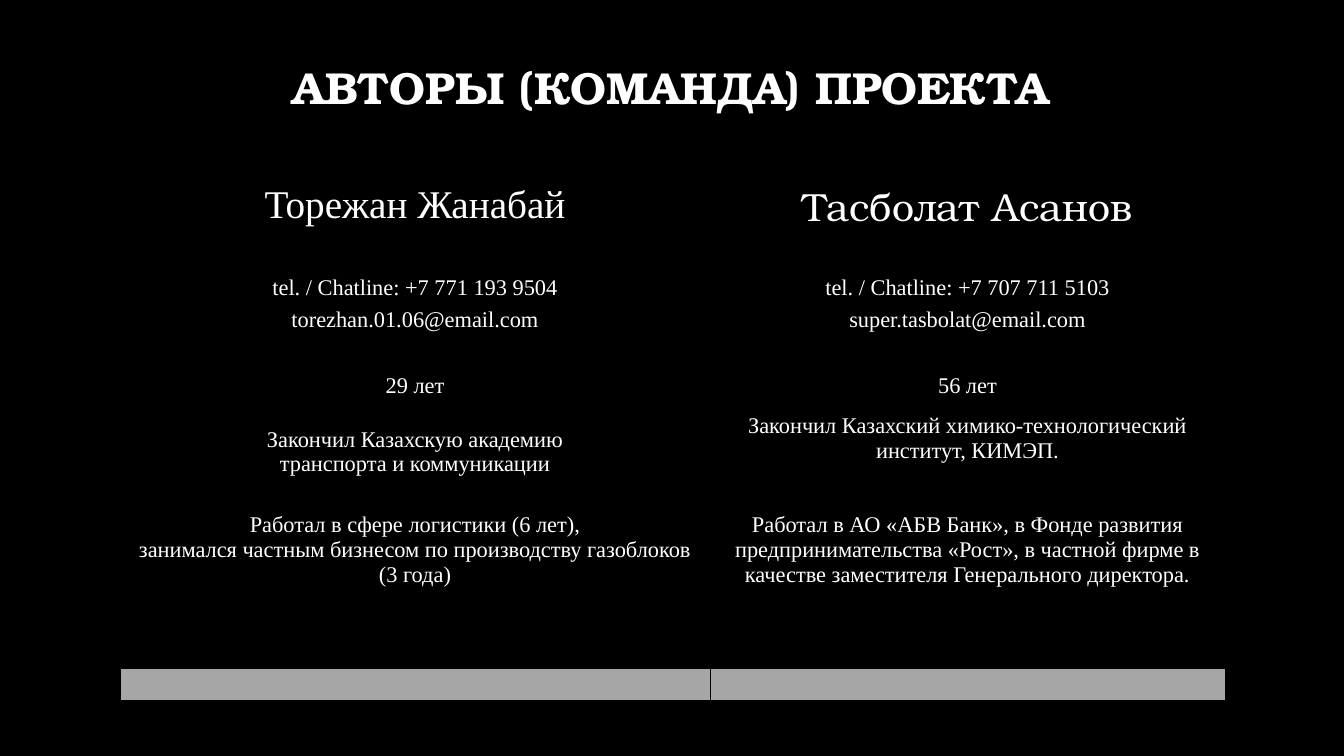
import dataclasses

import lxml.etree
import pptx
import pptx.dml.color
import pptx.enum.text
import pptx.oxml.ns
import pptx.util

EMU_PER_PX = 914400 / 100.8
WHITE, BLACK, GREY = "FFFFFF", "000000", "A6A6A6"
SERIF, DISPLAY = "Times New Roman", "TeX Gyre Bonum"
COLUMN_WIDTHS = (590, 515)
ROW_HEIGHTS = (57, 37, 33, 33, 33, 33, 98, 98, 33, 37, 32)


@dataclasses.dataclass(frozen=True)
class Entry:
    """Text of one table cell and its look."""

    row: int
    text: str
    size: int = 16
    font: str = SERIF
    bottom: int = 0


AUTHORS = (
    (
        Entry(0, "Торежан Жанабай", 28),
        Entry(2, "tel. / Chatline: +7 771 193 9504"),
        Entry(3, "torezhan.01.06@email.com"),
        Entry(5, "29 лет"),
        Entry(6, "Закончил Казахскую академию\nтранспорта и коммуникации"),
        Entry(7, "Работал в сфере логистики (6 лет),\n"
                 "занимался частным бизнесом по производству газоблоков\n(3 года)"),
    ),
    (
        Entry(0, "Тасболат Асанов", 28, DISPLAY),
        Entry(2, "tel. / Chatline: +7 707 711 5103"),
        Entry(3, "super.tasbolat@email.com"),
        Entry(5, "56 лет"),
        Entry(6, "Закончил Казахский химико-технологический институт, КИМЭП.", bottom=26),
        Entry(7, "Работал в АО «АБВ Банк», в Фонде развития предпринимательства «Рост», "
                 "в частной фирме в качестве заместителя Генерального директора."),
    ),
)


def px(length: int) -> pptx.util.Emu:
    """Turn px into EMU."""
    return pptx.util.Emu(round(length * EMU_PER_PX))


def rgb(value: str) -> pptx.dml.color.RGBColor:
    """Turn a hex string into a colour."""
    return pptx.dml.color.RGBColor.from_string(value)


def format_text(frame, size: int, font: str, bold: bool = False) -> None:
    """Centre the paragraphs of a frame and style their runs."""
    for para in frame.paragraphs:
        para.alignment = pptx.enum.text.PP_ALIGN.CENTER
        for span in para.runs:
            span.font.size = pptx.util.Pt(size)
            span.font.name = font
            span.font.bold = bold
            span.font.color.rgb = rgb(WHITE)


def add_borders(cell, outer_sides: set[str]) -> None:
    """Draw black cell borders, thicker on the outer sides."""
    properties = cell._tc.get_or_add_tcPr()
    qn = pptx.oxml.ns.qn
    for side in "LRTB":
        width = pptx.util.Pt(1 if side in outer_sides else 0.5)
        line = lxml.etree.SubElement(properties, qn(f"a:ln{side}"), w=str(int(width)))
        fill = lxml.etree.SubElement(line, qn("a:solidFill"))
        lxml.etree.SubElement(fill, qn("a:srgbClr"), val=BLACK)


def add_title(slide) -> None:
    """Place and format the slide title."""
    title = slide.shapes.title
    title.left, title.top, title.width, title.height = map(px, (175, 48, 992, 71))
    frame = title.text_frame
    frame.text = "АВТОРЫ (КОМАНДА) ПРОЕКТА"
    frame.vertical_anchor = pptx.enum.text.MSO_ANCHOR.BOTTOM
    frame.paragraphs[0].line_spacing = 0.9
    format_text(frame, 32, DISPLAY, bold=True)


def add_authors(slide) -> None:
    """Build the table with one column per author."""
    table = slide.shapes.add_table(
        len(ROW_HEIGHTS), len(COLUMN_WIDTHS),
        px(120), px(177), px(sum(COLUMN_WIDTHS)), px(sum(ROW_HEIGHTS)),
    ).table
    table.first_row = table.horz_banding = False
    for column, width in zip(table.columns, COLUMN_WIDTHS):
        column.width = px(width)
    last_row = len(ROW_HEIGHTS) - 1
    for row, height in enumerate(ROW_HEIGHTS):
        table.rows[row].height = px(height)
        for column in range(len(COLUMN_WIDTHS)):
            cell = table.cell(row, column)
            cell.margin_left = cell.margin_right = cell.margin_top = cell.margin_bottom = 0
            cell.vertical_anchor = pptx.enum.text.MSO_ANCHOR.MIDDLE
            outer_sides = ({"T"} if row == 0 else set()) | ({"L"} if column == 0 else set())
            add_borders(cell, outer_sides)
            if row == last_row:
                cell.fill.solid()
                cell.fill.fore_color.rgb = rgb(GREY)
            else:
                cell.fill.background()
    for column, entries in enumerate(AUTHORS):
        for entry in entries:
            cell = table.cell(entry.row, column)
            cell.text_frame.text = entry.text
            cell.margin_bottom = px(entry.bottom)
            format_text(cell.text_frame, entry.size, entry.font)


def main() -> None:
    """Build and save the slide."""
    deck = pptx.Presentation()
    deck.slide_width, deck.slide_height = px(1344), px(756)
    slide = deck.slides.add_slide(deck.slide_layouts[0])
    slide.background.fill.solid()
    slide.background.fill.fore_color.rgb = rgb(BLACK)
    subtitle = slide.placeholders[1].element
    subtitle.getparent().remove(subtitle)
    add_title(slide)
    add_authors(slide)
    deck.save("out.pptx")


if __name__ == "__main__":
    main()
